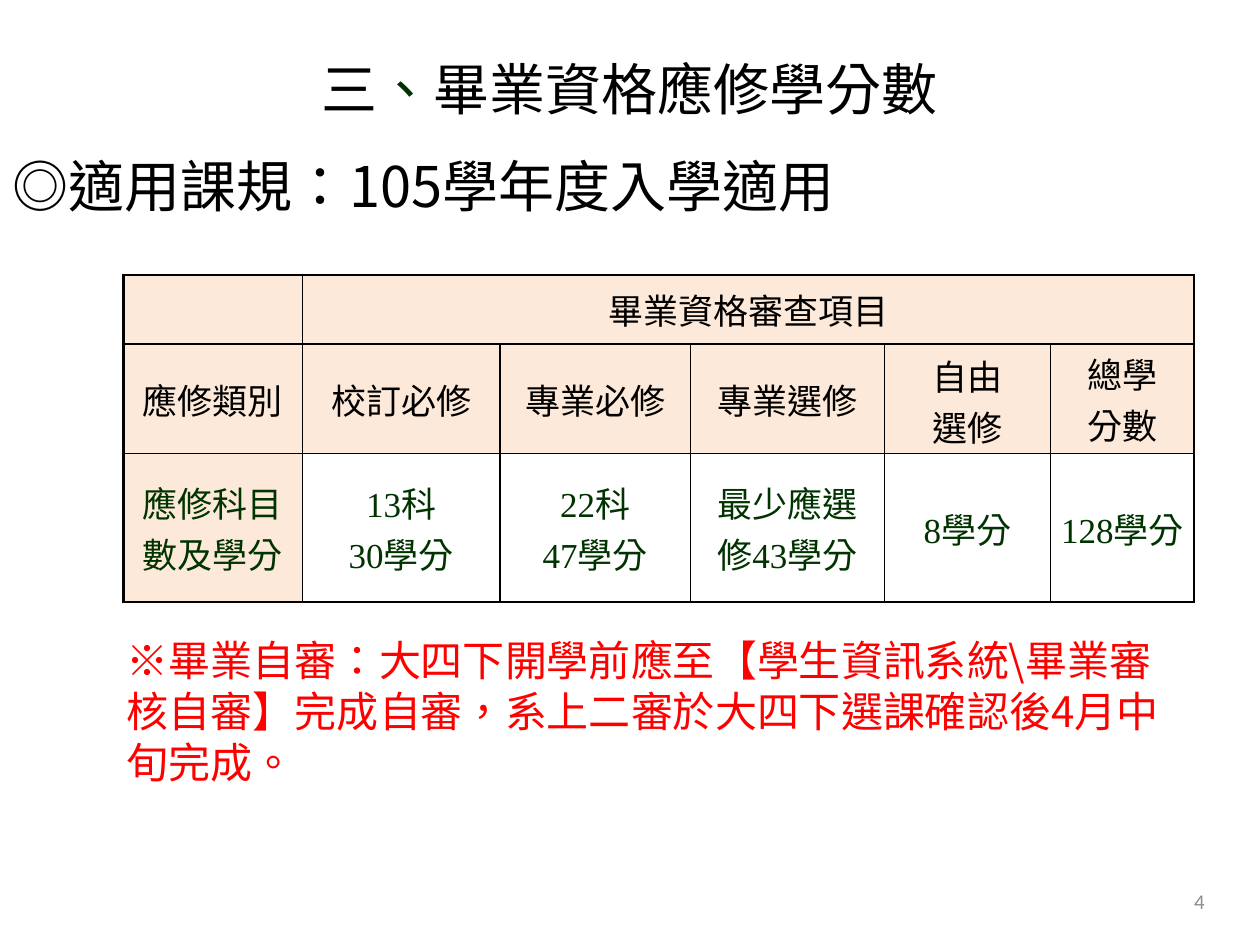
from lxml import etree
from pptx import Presentation
from pptx import util as u
from pptx.dml.color import RGBColor
from pptx.enum import text as t
from pptx.oxml import ns

SANS, SERIF = "Noto Sans CJK SC", "Times New Roman"
BLACK, GREEN, RED, GREY, PEACH = "000000", "003300", "FF0000", "8C8C8C", "FDE9D9"
COLUMNS = [1.42, 1.57, 1.51, 1.54, 1.32, 1.14]
ROWS = [0.55, 0.87, 1.18]
GRID = [
    ["", "畢業資格審查項目", "", "", "", ""],
    ["應修類別", "校訂必修", "專業必修", "專業選修", "自由\n選修", "總學\n分數"],
    ["應修科目數及學分", "13科\n30學分", "22科\n47學分", "最少應選修43學分", "8學分", "128學分"],
]


def colour(value):
    return RGBColor.from_string(value)


def apply(target, values):
    for name, value in values.items():
        setattr(target, name, value)


def add_span(para, words, size, shade, latin=SANS, asian=SANS):
    span = para.add_run()
    span.text = words
    apply(span.font, {"size": u.Pt(size), "name": latin, "bold": False})
    span.font.color.rgb = colour(shade)
    properties = span._r.get_or_add_rPr()
    properties.set("lang", "zh-TW")
    etree.SubElement(properties, ns.qn("a:ea")).set("typeface", asian)


def place(shape, box):
    apply(shape, dict(zip(("left", "top", "width", "height"), map(u.Inches, box))))


def add_heading(page, box):
    title = page.shapes.title
    place(title, box)
    frame = title.text_frame
    apply(frame, {"word_wrap": True, "auto_size": t.MSO_AUTO_SIZE.NONE,
                  "vertical_anchor": t.MSO_ANCHOR.MIDDLE,
                  "margin_bottom": u.Pt(55) + u.Inches(0.05)})
    lines = [
        (t.PP_ALIGN.CENTER, [("三", BLACK), ("、", GREEN), ("畢業資格應修學分數", BLACK)]),
        (t.PP_ALIGN.LEFT, [("◎適用課規：105學年度入學適用", BLACK)]),
    ]
    for index, (alignment, spans) in enumerate(lines):
        para = frame.add_paragraph() if index else frame.paragraphs[0]
        apply(para, {"alignment": alignment, "line_spacing": u.Pt(55), "space_before": u.Pt(0)})
        for words, shade in spans:
            add_span(para, words, 32, shade)


def add_text(page, box, words, size, shade, font, alignment, spacing=None):
    frame = page.shapes.add_textbox(*map(u.Inches, box)).text_frame
    apply(frame, {"word_wrap": True, "vertical_anchor": t.MSO_ANCHOR.MIDDLE})
    para = frame.paragraphs[0]
    apply(para, {"alignment": alignment, "line_spacing": spacing})
    add_span(para, words, size, shade, font)


def add_borders(cell, widths):
    properties = cell._tc.get_or_add_tcPr()
    for index, (edge, width) in enumerate(widths.items()):
        line = etree.Element(ns.qn(f"a:{edge}"), w=str(u.Pt(width)))
        fill = etree.SubElement(line, ns.qn("a:solidFill"))
        etree.SubElement(fill, ns.qn("a:srgbClr")).set("val", BLACK)
        properties.insert(index, line)


def fill_cell(cell, words, row, column):
    last = column == len(COLUMNS) - 1
    cell.vertical_anchor = t.MSO_ANCHOR.MIDDLE
    if last:
        apply(cell, dict.fromkeys(
            ("margin_left", "margin_right", "margin_top", "margin_bottom"), 0))
    if row < 2 or column == 0:
        cell.fill.solid()
        cell.fill.fore_color.rgb = colour(PEACH)
    else:
        cell.fill.background()
    right = last or (row == 0 and column > 0)
    add_borders(cell, {"lnL": 1 if column else 1.5, "lnR": 1.5 if right else 1,
                       "lnT": 1 if row else 1.5, "lnB": 1})
    for index, line in enumerate(words.split("\n") if words else []):
        para = cell.text_frame.add_paragraph() if index else cell.text_frame.paragraphs[0]
        para.alignment = t.PP_ALIGN.CENTER
        add_span(para, line, 20, GREEN if row == 2 else BLACK, SERIF)


def add_credits(page, box):
    table = page.shapes.add_table(len(ROWS), len(COLUMNS), *map(u.Inches, box)).table
    apply(table, {"first_row": False, "horz_banding": False})
    for column, width in zip(table.columns, COLUMNS):
        column.width = u.Inches(width)
    for row, height in zip(table.rows, ROWS):
        row.height = u.Inches(height)
    table.cell(0, 1).merge(table.cell(0, len(COLUMNS) - 1))
    for row, line in enumerate(GRID):
        for column, words in enumerate(line):
            fill_cell(table.cell(row, column), words, row, column)


def main():
    deck = Presentation()
    apply(deck, {"slide_width": u.Inches(10), "slide_height": u.Inches(7.5)})
    page = deck.slides.add_slide(deck.slide_layouts.get_by_name("Title Only"))
    add_heading(page, (0, 0.53, 10, 1.64))
    add_text(page, (0.91, 5.01, 8.66, 1.26),
             "※畢業自審：大四下開學前應至【學生資訊系統\\畢業審核自審】完成自審，"
             "系上二審於大四下選課確認後4月中旬完成。",
             24, RED, SANS, t.PP_ALIGN.LEFT, u.Pt(29))
    add_credits(page, (0.98, 2.18, sum(COLUMNS), sum(ROWS)))
    add_text(page, (7.33, 6.95, 2.33, 0.4), "4", 12, GREY, "Calibri", t.PP_ALIGN.RIGHT)
    deck.save("out.pptx")


if __name__ == "__main__":
    main()
